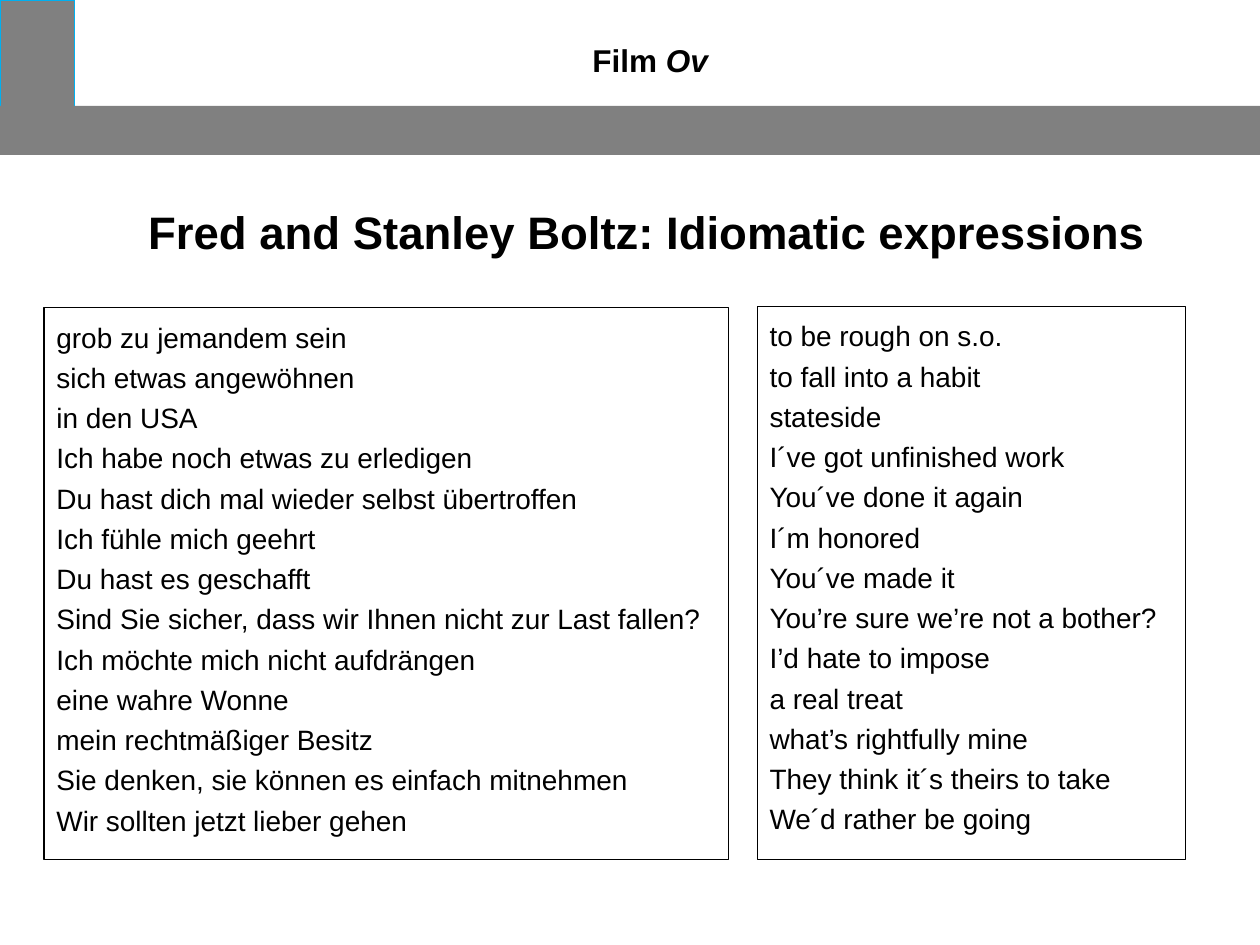
from pptx import Presentation
from pptx.dml.color import RGBColor
from pptx.enum.shapes import MSO_SHAPE as SHAPE
from pptx.enum.text import MSO_ANCHOR as ANCHOR, PP_ALIGN as ALIGN
from pptx.util import Inches, Pt

BLACK = RGBColor(0x00, 0x00, 0x00)
WHITE = RGBColor(0xFF, 0xFF, 0xFF)
GRAY = RGBColor(0x80, 0x80, 0x80)
BLUE = RGBColor(0x00, 0xB0, 0xF0)

EXPRESSIONS = [
    ("grob zu jemandem sein", "to be rough on s.o."),
    ("sich etwas angewöhnen", "to fall into a habit"),
    ("in den USA", "stateside"),
    ("Ich habe noch etwas zu erledigen", "I´ve got unfinished work"),
    ("Du hast dich mal wieder selbst übertroffen", "You´ve done it again"),
    ("Ich fühle mich geehrt", "I´m honored"),
    ("Du hast es geschafft", "You´ve made it"),
    ("Sind Sie sicher, dass wir Ihnen nicht zur Last fallen?",
     "You’re sure we’re not a bother?"),
    ("Ich möchte mich nicht aufdrängen", "I’d hate to impose"),
    ("eine wahre Wonne", "a real treat"),
    ("mein rechtmäßiger Besitz", "what’s rightfully mine"),
    ("Sie denken, sie können es einfach mitnehmen",
     "They think it´s theirs to take"),
    ("Wir sollten jetzt lieber gehen", "We´d rather be going"),
]


def add_rect(s, box, fill, line=None):
    sp = s.shapes.add_shape(SHAPE.RECTANGLE, *map(Inches, box))
    sp.shadow.inherit = False
    sp.fill.solid()
    sp.fill.fore_color.rgb = fill
    if line is None:
        sp.line.fill.background()
    else:
        sp.line.color.rgb = line
        sp.line.width = Pt(0.75)
    return sp


def add_run(p, text, size, **formats):
    r = p.add_run()
    r.text = text
    r.font.color.rgb = BLACK
    for name, value in {"name": "Arial", "size": Pt(size), **formats}.items():
        setattr(r.font, name, value)


def add_heading(s, box, size, runs, space_before=0):
    """Add a bold centred line; runs are (text, italic) pairs."""
    tf = s.shapes.add_textbox(*map(Inches, box)).text_frame
    tf.word_wrap = True
    p = tf.paragraphs[0]
    p.alignment = ALIGN.CENTER
    p.space_before = Pt(space_before)
    for text, italic in runs:
        add_run(p, text, size, bold=True, italic=italic)


def add_phrase_box(s, box, phrases):
    tf = add_rect(s, box, WHITE, BLACK).text_frame
    tf.word_wrap = True
    tf.vertical_anchor = ANCHOR.TOP
    for i, phrase in enumerate(phrases):
        p = tf.add_paragraph() if i else tf.paragraphs[0]
        p.alignment = ALIGN.LEFT
        p.line_spacing = Pt(23)
        add_run(p, phrase, 16)


def main():
    prs = Presentation()
    prs.slide_width, prs.slide_height = Inches(10), Inches(7.5)
    s = prs.slides.add_slide(prs.slide_layouts[6])

    add_rect(s, (0, 0, 0.59, 0.91), GRAY, BLUE)
    add_heading(s, (0.98, 0.28, 8.43, 0.39), 18,
                [("Film ", False), ("Ov ", True)], space_before=11)
    add_rect(s, (0, 0.84, 10, 0.39), GRAY)
    add_heading(s, (0.82, 1.57, 8.63, 0.52), 26,
                [("Fred and Stanley Boltz: Idiomatic expressions", False)])

    german, english = zip(*EXPRESSIONS)
    add_phrase_box(s, (0.35, 2.44, 5.43, 4.38), german)
    add_phrase_box(s, (6.01, 2.43, 3.4, 4.39), english)
    prs.save("out.pptx")


if __name__ == "__main__":
    main()
